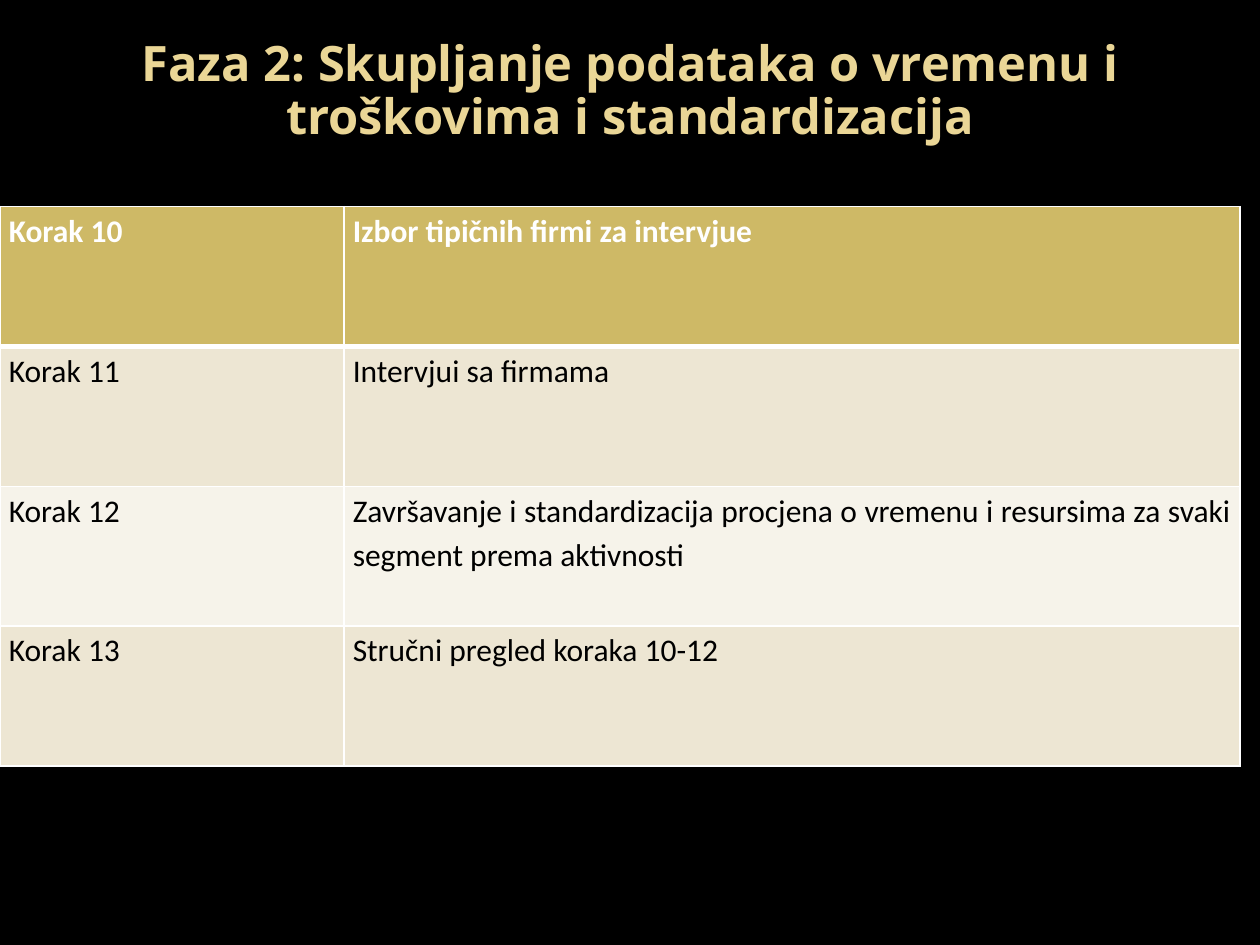
from dataclasses import dataclass

from lxml import etree
from pptx import Presentation
from pptx.dml.color import RGBColor
from pptx.enum.text import MSO_ANCHOR, MSO_AUTO_SIZE, PP_ALIGN
from pptx.oxml.ns import qn
from pptx.util import Inches, Pt

BOTTOM = MSO_ANCHOR.BOTTOM
CENTER, JUSTIFY = PP_ALIGN.CENTER, PP_ALIGN.JUSTIFY
NO_AUTOFIT = MSO_AUTO_SIZE.NONE


@dataclass(frozen=True)
class Theme:
    background: str = "000000"
    title: str = "EAD696"
    header_fill: str = "CEB966"
    header_text: str = "FFFFFF"
    band_fills: tuple = ("EDE6D3", "F6F3EA")
    body_text: str = "000000"
    border: str = "FFFFFF"
    title_font: str = "Noto Sans"
    table_font: str = "Calibri"
    title_size: float = 27.9
    table_size: float = 18
    thin: float = 1
    thick: float = 3


@dataclass(frozen=True)
class Step:
    name: str
    task: str


THEME = Theme()
TITLE = "Faza 2: Skupljanje podataka o vremenu i troškovima i standardizacija"
STEPS = [
    Step("Korak 10", "Izbor tipičnih firmi za intervjue"),
    Step("Korak 11", "Intervjui sa firmama"),
    Step("Korak 12", "Završavanje i standardizacija procjena o vremenu "
                     "i resursima za svaki segment prema aktivnosti"),
    Step("Korak 13", "Stručni pregled koraka 10-12"),
]
COLUMN_WIDTHS = (2.73, 7.11)
ROW_HEIGHT = 1.11


def format_text(p, font: str, size: float, color: str, bold: bool) -> None:
    for r in p.runs:
        r.font.name = font
        r.font.size = Pt(size)
        r.font.bold = bold
        r.font.color.rgb = RGBColor.from_string(color)


def set_borders(cell, top: float, bottom: float) -> None:
    """Add cell borders ahead of the fill, as the schema requires."""
    widths = {"a:lnL": THEME.thin, "a:lnR": THEME.thin,
              "a:lnT": top, "a:lnB": bottom}
    tc_pr = cell._tc.get_or_add_tcPr()
    for i, (tag, width) in enumerate(widths.items()):
        line = etree.Element(qn(tag), w=str(Pt(width)))
        fill = etree.SubElement(line, qn("a:solidFill"))
        etree.SubElement(fill, qn("a:srgbClr"), val=THEME.border)
        tc_pr.insert(i, line)


def add_title(s) -> None:
    sp = s.shapes.title
    sp.left, sp.top = Inches(0.5), Inches(0.39)
    sp.width, sp.height = Inches(9), Inches(1.16)
    tf = sp.text_frame
    tf.text = TITLE
    tf.word_wrap = True
    tf.auto_size = NO_AUTOFIT
    tf.vertical_anchor = BOTTOM
    tf.margin_top, tf.margin_bottom = 0, Inches(0.4)
    p = tf.paragraphs[0]
    p.alignment = CENTER
    p.line_spacing = 0.9
    format_text(p, THEME.title_font, THEME.title_size, THEME.title, True)


def fill_cell(cell, text: str, row: int) -> None:
    header = row == 0
    bands = THEME.band_fills
    fill = THEME.header_fill if header else bands[(row - 1) % len(bands)]
    color = THEME.header_text if header else THEME.body_text
    cell.fill.solid()
    cell.fill.fore_color.rgb = RGBColor.from_string(fill)
    cell.margin_left = cell.margin_right = Inches(0.07)
    cell.margin_top = cell.margin_bottom = 0
    cell.text_frame.text = text
    p = cell.text_frame.paragraphs[0]
    p.alignment = JUSTIFY
    p.line_spacing = 1.15
    format_text(p, THEME.table_font, THEME.table_size, color, header)
    # A thick rule separates the header from the body
    set_borders(cell, THEME.thick if row == 1 else THEME.thin,
                THEME.thick if header else THEME.thin)


def add_steps_table(s, steps: list[Step]) -> None:
    table = s.shapes.add_table(
        len(steps), len(COLUMN_WIDTHS), Inches(0), Inches(1.64),
        Inches(sum(COLUMN_WIDTHS)), Inches(ROW_HEIGHT * len(steps))).table
    for column, width in zip(table.columns, COLUMN_WIDTHS):
        column.width = Inches(width)
    for i, step in enumerate(steps):
        table.rows[i].height = Inches(ROW_HEIGHT)
        for j, text in enumerate((step.name, step.task)):
            fill_cell(table.cell(i, j), text, i)


def main() -> None:
    prs = Presentation()
    prs.slide_width, prs.slide_height = Inches(10), Inches(7.5)
    s = prs.slides.add_slide(prs.slide_layouts[5])  # Title Only

    # Background
    s.background.fill.solid()
    s.background.fill.fore_color.rgb = RGBColor.from_string(THEME.background)

    # Content
    add_title(s)
    add_steps_table(s, STEPS)
    prs.save("out.pptx")


if __name__ == "__main__":
    main()
